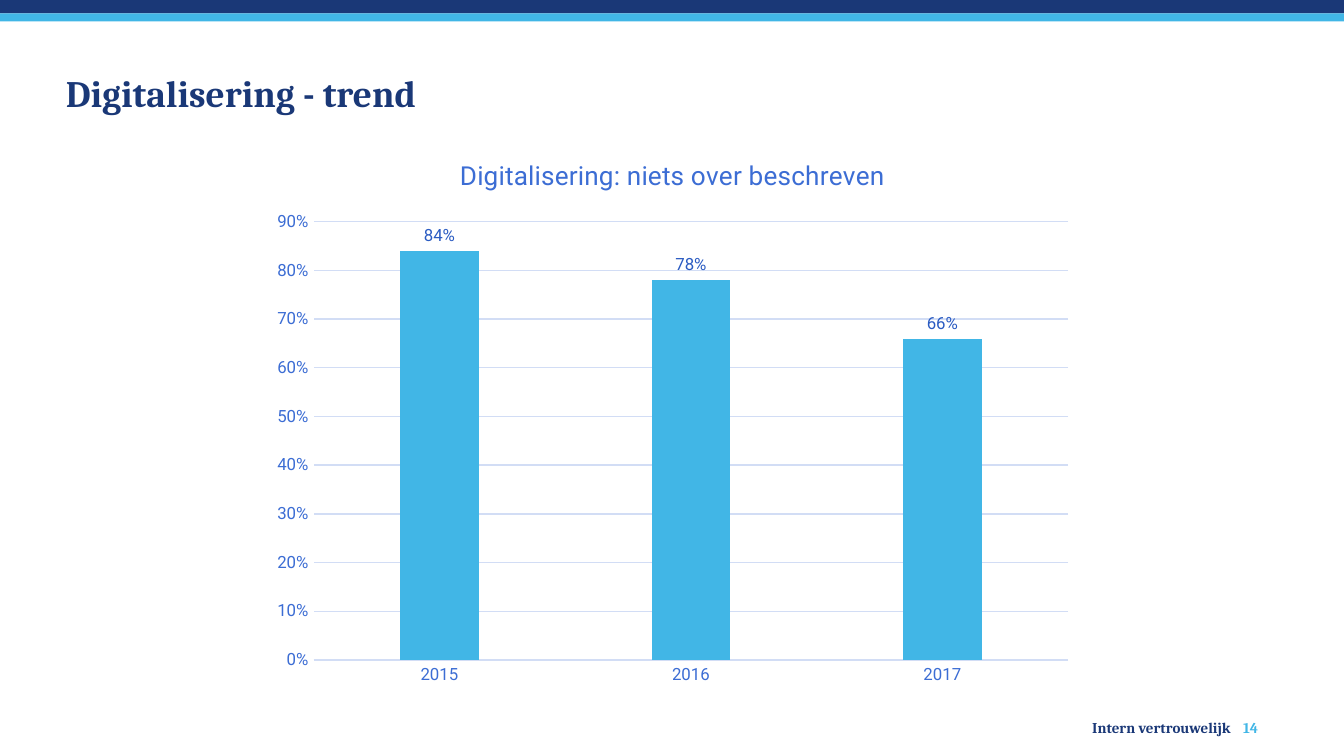
from pptx import Presentation
from pptx.chart.data import CategoryChartData
from pptx.dml.color import RGBColor
from pptx.enum.chart import XL_CHART_TYPE, XL_LABEL_POSITION, XL_TICK_MARK
from pptx.enum.shapes import MSO_SHAPE
from pptx.enum.text import MSO_ANCHOR, PP_ALIGN
from pptx.util import Inches, Pt

WIDTH = 10
HEIGHT = WIDTH * 9 / 16
COLORS = {"navy": "1A3877", "sky": "41B6E6", "blue": "3C6DD4",
          "label": "2A5BC2", "grid": "D2DDF5"}
BANDS = [("navy", 0.1), ("sky", 0.06)]
# text, (left, top, width, height), insets, size, color, alignment, anchor, wrap
TEXTS = [
    ("Intern vertrouwelijk", (5.74, 5.31, 3.46, 0.21), (0.04, 0.04, 0.04, 0.04),
     8, "navy", PP_ALIGN.RIGHT, MSO_ANCHOR.TOP, True),
    ("Digitalisering - trend", (0.45, 0.52, 9.12, 0.34), (0.04, 0, 0.1, 0),
     20, "navy", PP_ALIGN.LEFT, MSO_ANCHOR.MIDDLE, True),
    ("14", (9.25, 5.33, 0.3, 0.17), (0, 0, 0, 0),
     8, "sky", PP_ALIGN.LEFT, MSO_ANCHOR.MIDDLE, False),
]
CHART_TITLE = "Digitalisering: niets over beschreven"
CHART_AREA = (1.94, 1, 6.13, 4.18)
SHARES = {"2015": 0.84, "2016": 0.78, "2017": 0.66}


def color(name):
    return RGBColor.from_string(COLORS[name])


def style(font, size, color_name, face="Roboto", bold=False):
    font.size, font.name, font.bold = Pt(size), face, bold
    font.color.rgb = color(color_name)


def add_bands(page):
    top = 0
    for name, height in BANDS:
        band = page.shapes.add_shape(MSO_SHAPE.RECTANGLE, 0, Inches(top),
                                     Inches(WIDTH), Inches(height))
        band.shadow.inherit = False
        band.fill.solid()
        band.fill.fore_color.rgb = color(name)
        band.line.fill.background()
        top += height


def add_text(page, text, area, insets, size, color_name, alignment, anchor, wrap):
    box = page.shapes.add_textbox(*map(Inches, area))
    frame = box.text_frame
    (frame.margin_left, frame.margin_top,
     frame.margin_right, frame.margin_bottom) = map(Inches, insets)
    frame.word_wrap, frame.vertical_anchor = wrap, anchor
    para = frame.paragraphs[0]
    para.alignment = alignment
    span = para.add_run()
    span.text = text
    style(span.font, size, color_name, "Cambria", True)


def add_trend_chart(page):
    data = CategoryChartData(number_format="0%")
    data.categories = list(SHARES)
    data.add_series("Series 1", list(SHARES.values()))
    chart = page.shapes.add_chart(XL_CHART_TYPE.COLUMN_CLUSTERED,
                                  *map(Inches, CHART_AREA), data).chart
    style(chart.font, 10, "navy")
    chart.has_legend = False
    chart.has_title = True
    span = chart.chart_title.text_frame.paragraphs[0].add_run()
    span.text = CHART_TITLE
    style(span.font, 14, "blue")
    chart.chart_title.include_in_layout = False

    for axis in (chart.category_axis, chart.value_axis):
        axis.major_tick_mark = axis.minor_tick_mark = XL_TICK_MARK.NONE
        style(axis.tick_labels.font, 9, "blue")
    values = chart.value_axis
    values.minimum_scale, values.maximum_scale, values.major_unit = 0, 0.9, 0.1
    values.tick_labels.number_format = "0%"
    values.tick_labels.number_format_is_linked = False
    values.format.line.fill.background()
    for line in (chart.category_axis.format.line, values.major_gridlines.format.line):
        line.color.rgb = color("grid")
        line.width = Pt(0.75)

    plot = chart.plots[0]
    plot.gap_width, plot.overlap, plot.vary_by_categories = 219, -27, False
    fill = plot.series[0].format.fill
    fill.solid()
    fill.fore_color.rgb = color("sky")
    plot.has_data_labels = True
    labels = plot.data_labels
    labels.show_value = True
    labels.number_format, labels.number_format_is_linked = "0%", False
    labels.position = XL_LABEL_POSITION.OUTSIDE_END
    style(labels.font, 9, "label")


def main():
    deck = Presentation()
    deck.slide_width, deck.slide_height = Inches(WIDTH), Inches(HEIGHT)
    page = deck.slides.add_slide(deck.slide_layouts[6])
    add_bands(page)
    for entry in TEXTS:
        add_text(page, *entry)
    add_trend_chart(page)
    deck.save("out.pptx")


if __name__ == "__main__":
    main()
